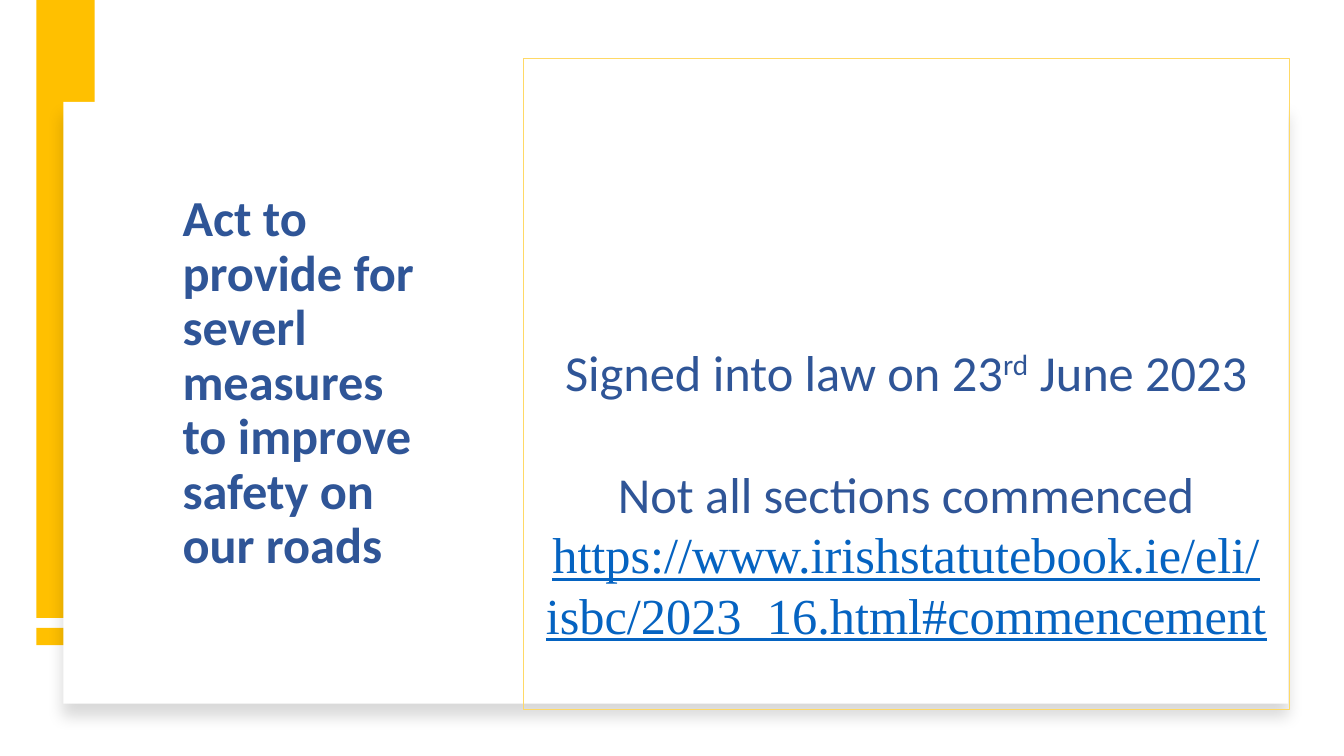
import dataclasses
import typing

import lxml.etree
import pptx
import pptx.dml.color
import pptx.enum.shapes
import pptx.enum.text
import pptx.oxml.ns
import pptx.util

RGB = pptx.dml.color.RGBColor
GOLD = RGB(0xFF, 0xC0, 0x00)
PALE = RGB(0xFF, 0xD9, 0x66)
WHITE = RGB(0xFF, 0xFF, 0xFF)
BLUE = RGB(0x2F, 0x55, 0x97)
LINK = RGB(0x05, 0x63, 0xC1)

WIDE = pptx.util.Inches(13.333)
HIGH = pptx.util.Inches(7.5)
COL = WIDE / 100
ROW = HIGH / 100

ALIGN = pptx.enum.text.PP_ALIGN
ANCHOR = pptx.enum.text.MSO_ANCHOR
qn = pptx.oxml.ns.qn


@dataclasses.dataclass(frozen=True)
class Area:
    col: float
    row: float
    cols: float
    rows: float

    def place(self) -> tuple[int, int, int, int]:
        return (round(self.col * COL), round(self.row * ROW),
                round(self.cols * COL), round(self.rows * ROW))


@dataclasses.dataclass(frozen=True)
class Panel:
    area: Area
    fill: typing.Optional[RGB] = None
    line: typing.Optional[RGB] = None
    shade: bool = False


TITLE = Area(9.08, 13.2, 22.8, 75.2)
FRAME = Area(38.93, 7.73, 57, 86.13)

PANELS = [
    Panel(Area(2.7, 83.07, 4.35, 2.27), fill=GOLD),
    Panel(Area(2.7, 0, 4.35, 81.73), fill=GOLD),
    Panel(Area(4.72, 13.47, 91.13, 79.6), fill=WHITE, shade=True),
    Panel(FRAME, line=PALE),
]


def add_shade(shape: typing.Any) -> None:
    effects = shape.element.spPr.find(qn("a:effectLst"))
    outer = lxml.etree.SubElement(
        effects, qn("a:outerShdw"), blurRad=str(pptx.util.Pt(11)),
        dist=str(pptx.util.Pt(10)), dir="5400000", algn="t", rotWithShape="0")
    black = lxml.etree.SubElement(outer, qn("a:srgbClr"), val="000000")
    lxml.etree.SubElement(black, qn("a:alpha"), val="15000")


def add_panel(slide: typing.Any, panel: Panel) -> None:
    shape = slide.shapes.add_shape(
        pptx.enum.shapes.MSO_SHAPE.RECTANGLE, *panel.area.place())
    shape.shadow.inherit = False
    if panel.fill is None:
        shape.fill.background()
    else:
        shape.fill.solid()
        shape.fill.fore_color.rgb = panel.fill
    if panel.line is None:
        shape.line.fill.background()
    else:
        shape.line.color.rgb = panel.line
        shape.line.width = pptx.util.Pt(0.75)
    if panel.shade:
        add_shade(shape)


def add_frame(slide: typing.Any, area: Area, left: float = 0.1,
              top: float = 0.05, anchor: typing.Any = ANCHOR.TOP) -> typing.Any:
    frame = slide.shapes.add_textbox(*area.place()).text_frame
    frame.word_wrap = True
    frame.margin_left = pptx.util.Inches(left)
    frame.margin_top = pptx.util.Inches(top)
    frame.vertical_anchor = anchor
    return frame


def add_text(para: typing.Any, text: str, font: str = "Calibri",
             color: RGB = BLUE, bold: bool = False, under: bool = False,
             base: int = 0) -> None:
    run = para.add_run()
    run.text = text
    run.font.name = font
    run.font.size = pptx.util.Pt(36)
    run.font.color.rgb = color
    run.font.bold = bold
    run.font.underline = under
    if base:
        run.font._element.set("baseline", str(base * 1000))


def add_title(slide: typing.Any) -> None:
    frame = add_frame(slide, TITLE, left=0.6, anchor=ANCHOR.MIDDLE)
    para = frame.paragraphs[0]
    para.line_spacing = 0.9
    add_text(para, "Act to provide for severl measures to improve safety on our roads",
             bold=True)


def add_status(slide: typing.Any) -> None:
    frame = add_frame(slide, FRAME, top=2.8)
    signed, partial, source = (
        frame.paragraphs[0], frame.add_paragraph(), frame.add_paragraph())
    for para in frame.paragraphs:
        para.alignment = ALIGN.CENTER
    add_text(signed, "Signed into law on 23")
    add_text(signed, "rd", base=30)
    add_text(signed, " June 2023")
    partial.space_before = pptx.util.Pt(44)
    add_text(partial, "Not all sections commenced")
    add_text(source, "https://www.irishstatutebook.ie/eli/isbc/2023_16.html#commencement",
             font="Times New Roman", color=LINK, under=True)


def main() -> None:
    deck = pptx.Presentation()
    deck.slide_width, deck.slide_height = WIDE, HIGH
    slide = deck.slides.add_slide(deck.slide_layouts[6])
    for panel in PANELS:
        add_panel(slide, panel)
    add_title(slide)
    add_status(slide)
    deck.save("out.pptx")


if __name__ == "__main__":
    main()
